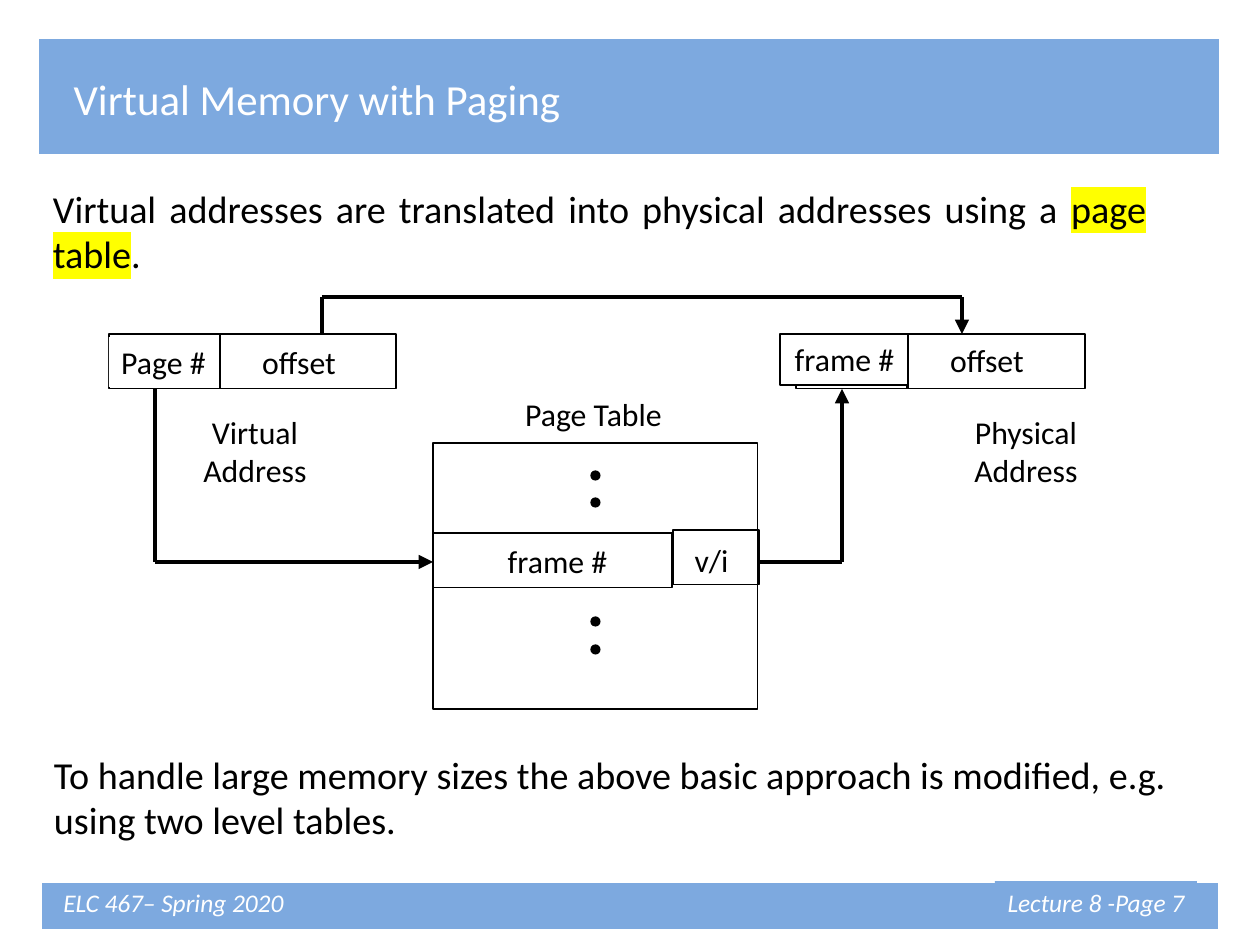
from pptx import Presentation
from pptx.dml.color import RGBColor
from pptx.enum.shapes import MSO_CONNECTOR, MSO_SHAPE
from pptx.enum.text import MSO_ANCHOR, MSO_AUTO_SIZE, PP_ALIGN
from pptx.oxml.ns import qn
from pptx.util import Pt
from lxml import etree

PX = 8000  # EMU in one px
BLUE = RGBColor(0x7D, 0xA9, 0xDF)
WHITE = RGBColor(0xFF, 0xFF, 0xFF)
BLACK = RGBColor(0, 0, 0)
HIGHLIGHT = RGBColor(0xFF, 0xFF, 0)

presentation = Presentation()
presentation.slide_width = 1260 * PX
presentation.slide_height = 945 * PX
slide = presentation.slides.add_slide(presentation.slide_layouts[5])
shapes = slide.shapes


def add_box(place, fill=None, line=None, weight=0.75, kind=MSO_SHAPE.RECTANGLE):
    shape = shapes.add_shape(kind, *[value * PX for value in place])
    shape.shadow.inherit = False
    if fill is None:
        shape.fill.background()
    else:
        shape.fill.solid()
        shape.fill.fore_color.rgb = fill
    if line is None:
        shape.line.fill.background()
    else:
        shape.line.color.rgb = line
        shape.line.width = Pt(weight)
    return shape


def write(text, place, shape=None, size=20, color=BLACK, align=PP_ALIGN.CENTER,
          italic=False, wrap=False, inset=(11, 6), anchor=MSO_ANCHOR.TOP, marked=""):
    """Put text into the shape, or into a new text box at the place."""
    left, top, width, height = [value * PX for value in place]
    if shape is None:
        shape = shapes.add_textbox(left, top, width, height)
    shape.left, shape.top, shape.width, shape.height = left, top, width, height
    frame = shape.text_frame
    frame.text = text
    frame.word_wrap = wrap
    frame.auto_size = MSO_AUTO_SIZE.NONE
    frame.vertical_anchor = anchor
    frame.margin_left = frame.margin_right = inset[0] * PX
    frame.margin_top = frame.margin_bottom = inset[1] * PX
    if marked:
        before, match, after = text.partition(marked)
        frame.text = before
        for part in (match, after):
            frame.paragraphs[0].add_run().text = part
    for paragraph in frame.paragraphs:
        paragraph.alignment = align
        for run in paragraph.runs:
            run.font.size = Pt(size)
            run.font.name = "Calibri"
            run.font.italic = italic
            run.font.color.rgb = color
    if marked:
        properties = list(shape.element.iter(qn("a:rPr")))[1]
        highlight = etree.Element(qn("a:highlight"))
        etree.SubElement(highlight, qn("a:srgbClr"), val=str(HIGHLIGHT))
        properties.find(qn("a:solidFill")).addnext(highlight)


# Title band
title_band = add_box((37, 37, 1184, 119), BLUE, WHITE, 2)
title_band.element.addnext(shapes.title.element)
write("Virtual Memory with Paging", (56, 66, 522, 64), shapes.title,
      size=27, color=WHITE, anchor=MSO_ANCHOR.MIDDLE)

# Footer
add_box((40, 881, 1180, 50), BLUE, WHITE, 2)
for text, place, inset in (
    ("Lecture 8 -Page 7", (995, 881, 202, 42), (11, 6)),
    ("ELC 467– Spring 2020", (62, 887, 223, 31), (0, 0)),
):
    write(text, place, add_box(place, BLUE), size=16, color=WHITE, italic=True, inset=inset)

# Explanations
write("Virtual addresses are translated into physical addresses using a page table.",
      (42, 179, 1115, 104), size=24, align=PP_ALIGN.JUSTIFY, wrap=True, marked="page table")
write("To handle large memory sizes the above basic approach is modified, "
      "e.g. using two level tables.",
      (43, 745, 1134, 104), size=24, align=PP_ALIGN.JUSTIFY, wrap=True)

# Address fields and page table
frame_field = (780, 334, 129, 51)
add_box((796, 334, 111, 55), WHITE, BLACK)
write("frame #", frame_field, add_box(frame_field, WHITE, BLACK), wrap=True)
for place, fill in (
    ((109, 334, 111, 55), WHITE),
    ((220, 334, 176, 55), WHITE),
    ((908, 334, 177, 55), WHITE),
    ((433, 443, 325, 266), None),
    ((433, 533, 239, 55), WHITE),
    ((673, 530, 86, 55), None),
):
    add_box(place, fill, BLACK)

page_label = (109, 337, 109, 50)
write("Page #", page_label, add_box(page_label, WHITE))
for text, place in (
    ("offset", (250, 337, 98, 50)),
    ("offset", (938, 335, 98, 50)),
    ("frame #", (496, 536, 123, 50)),
    ("v/i", (683, 535, 57, 50)),
    ("Page Table", (513, 389, 161, 50)),
    ("Virtual\nAddress", (191, 407, 128, 88)),
    ("Physical\nAddress", (962, 407, 128, 88)),
):
    write(text, place)

for dot_top in (471, 498, 617, 645):
    add_box((591, dot_top, 9, 9), BLACK, BLACK, kind=MSO_SHAPE.OVAL)

# Each route ends in an arrowhead
offset_route = ((322, 334), (322, 297), (962, 297), (962, 334))
page_route = ((155, 389), (155, 562), (433, 562))
frame_route = ((759, 562), (842, 562), (842, 389))
for route in (offset_route, page_route, frame_route):
    for start, end in zip(route, route[1:]):
        points = [value * PX for value in start + end]
        connector = shapes.add_connector(MSO_CONNECTOR.STRAIGHT, *points)
        connector.line.color.rgb = BLACK
        connector.line.width = Pt(3)
        if end == route[-1]:
            line = connector.element.spPr.find(qn("a:ln"))
            etree.SubElement(line, qn("a:tailEnd"), type="triangle")
        etree.SubElement(connector.element.spPr, qn("a:effectLst"))

presentation.save("out.pptx")
